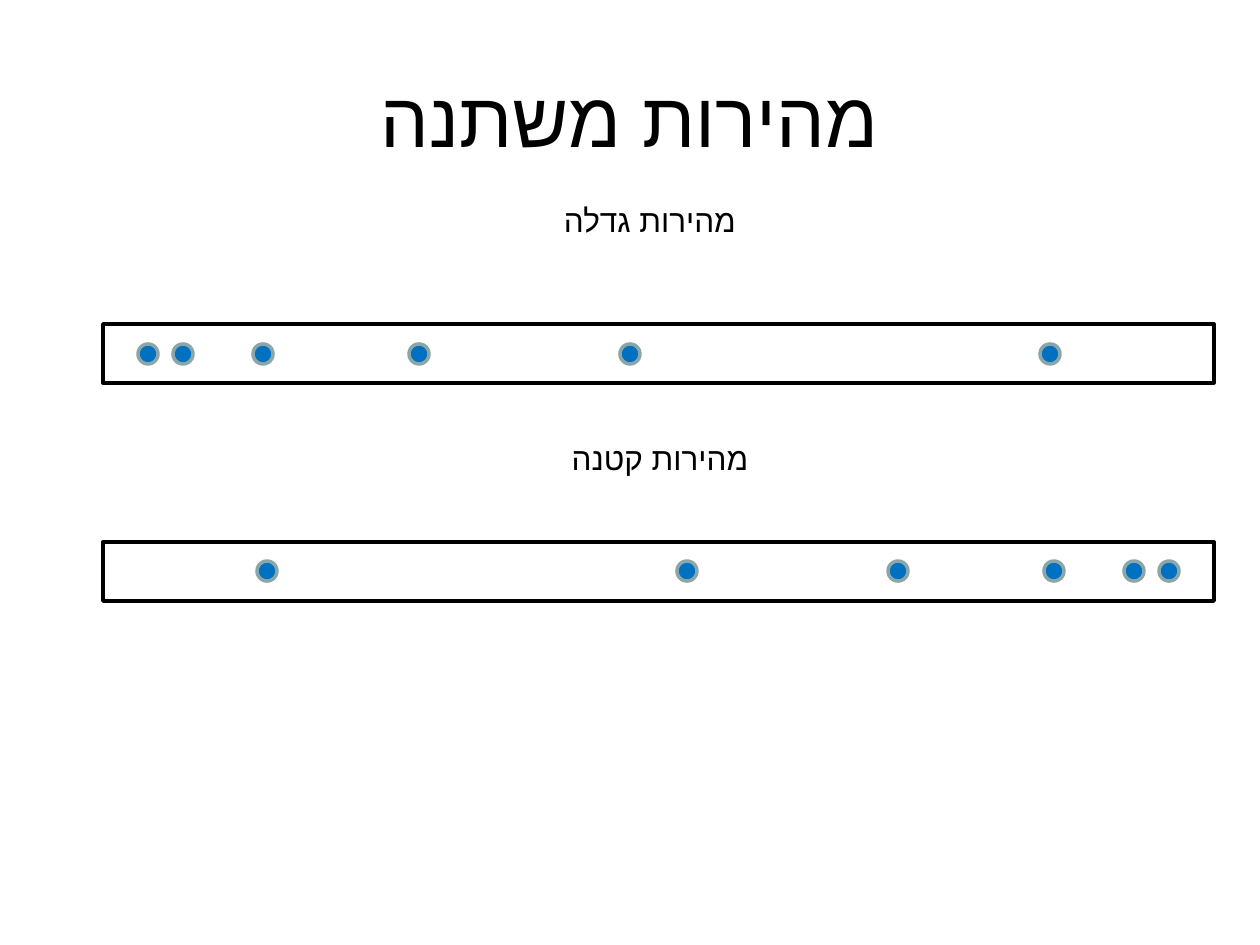
import pptx
import pptx.dml.color
import pptx.enum.shapes
import pptx.enum.text
import pptx.oxml.ns
import pptx.util
from lxml import etree

PX = 914400 // 126
BLACK = pptx.dml.color.RGBColor(0x00, 0x00, 0x00)
WHITE = pptx.dml.color.RGBColor(0xFF, 0xFF, 0xFF)
BLUE = pptx.dml.color.RGBColor(0x00, 0x70, 0xC0)
GREY_GREEN = pptx.dml.color.RGBColor(0x8A, 0xA6, 0xA8)
FONT = "Arial"

TITLE = ("מהירות משתנה", (63, 38, 1134, 157), 44)
CAPTIONS = [
    ("מהירות גדלה", (362, 195, 576, 50), 18),
    ("מהירות קטנה", (372, 433, 576, 50), 18),
]
STRIPS = [(324, 0), (542, 180)]
STRIP_LEFT, STRIP_WIDTH, STRIP_HEIGHT = 103, 1111, 59
DOT_CENTRES = [45, 80, 160, 316, 527, 947]
DOT_SIZE = 20


def emu(box):
    return [length * PX for length in box]


def write(holder, wording, size):
    frame = holder.text_frame
    frame.text = wording
    frame.word_wrap = True
    line = frame.paragraphs[0]
    line.alignment = pptx.enum.text.PP_ALIGN.CENTER
    line._p.get_or_add_pPr().set("rtl", "1")
    font = line.runs[0].font
    font.size = pptx.util.Pt(size)
    font.name = FONT
    font.color.rgb = BLACK
    complex_script = etree.SubElement(font._element, pptx.oxml.ns.qn("a:cs"))
    complex_script.set("typeface", FONT)


def draw(group, preset, box, fill, outline):
    part = group.shapes.add_shape(preset, *emu(box))
    part.shadow.inherit = False
    part.fill.solid()
    part.fill.fore_color.rgb = fill
    part.line.color.rgb = outline
    part.line.width = pptx.util.Pt(2)


def add_strip(slide, top, rotation):
    shape_kind = pptx.enum.shapes.MSO_SHAPE
    strip = slide.shapes.add_group_shape()
    draw(strip, shape_kind.RECTANGLE,
         (STRIP_LEFT, top, STRIP_WIDTH, STRIP_HEIGHT), WHITE, BLACK)
    dot_top = top + (STRIP_HEIGHT - DOT_SIZE) // 2 + 1
    for centre in DOT_CENTRES:
        dot_left = STRIP_LEFT + centre - DOT_SIZE // 2
        draw(strip, shape_kind.OVAL,
             (dot_left, dot_top, DOT_SIZE, DOT_SIZE), BLUE, GREY_GREEN)
    strip.rotation = rotation


def main():
    deck = pptx.Presentation()
    deck.slide_width = pptx.util.Inches(10)
    deck.slide_height = pptx.util.Inches(7.5)
    slide = deck.slides.add_slide(deck.slide_layouts[5])

    wording, box, size = TITLE
    title = slide.shapes.title
    title.left, title.top, title.width, title.height = emu(box)
    write(title, wording, size)
    title.text_frame.vertical_anchor = pptx.enum.text.MSO_ANCHOR.MIDDLE

    for top, rotation in STRIPS:
        add_strip(slide, top, rotation)

    for wording, box, size in CAPTIONS:
        caption = slide.shapes.add_textbox(*emu(box))
        write(caption, wording, size)
        caption.text_frame.auto_size = pptx.enum.text.MSO_AUTO_SIZE.SHAPE_TO_FIT_TEXT

    deck.save("out.pptx")


if __name__ == "__main__":
    main()
